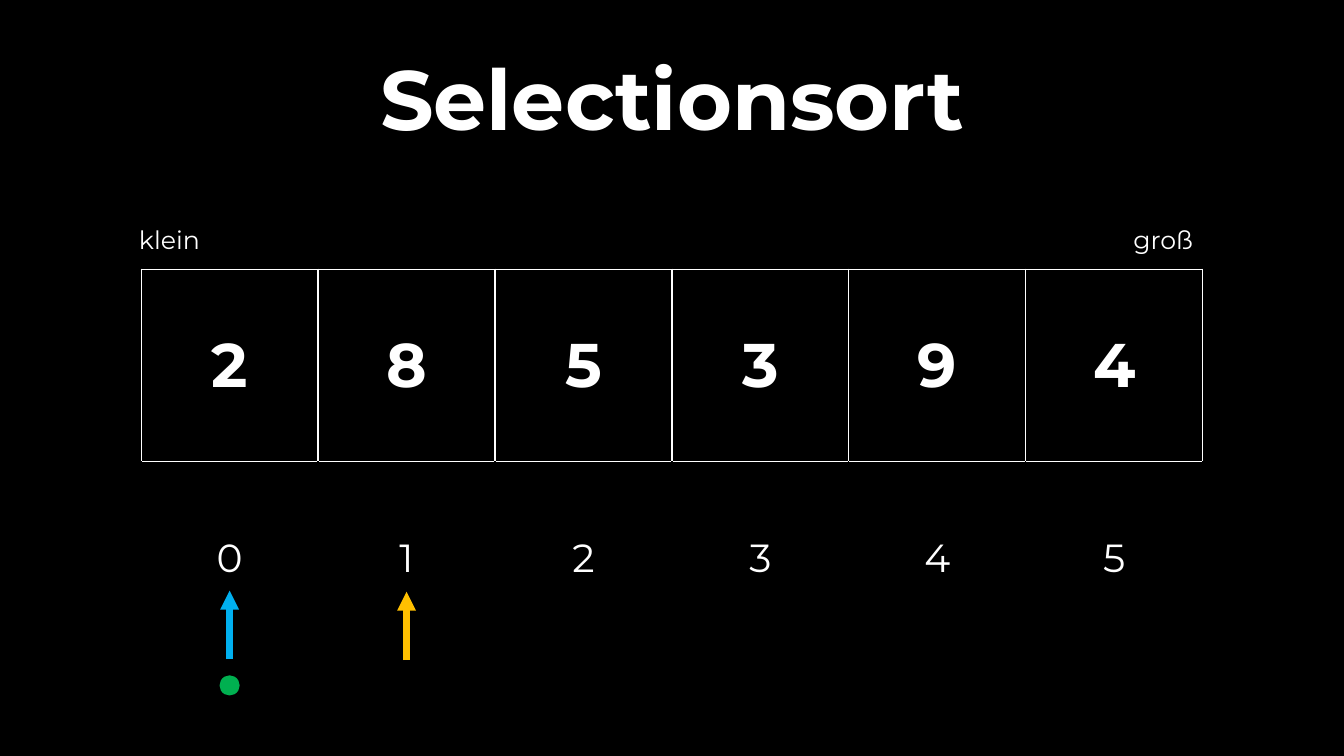
from lxml import etree
from pptx import Presentation, util as u
from pptx.dml.color import RGBColor
from pptx.enum import shapes, text
from pptx.oxml import ns

COLORS = {"black": "000000", "white": "FFFFFF", "blue": "00B0F0",
          "amber": "FFC000", "green": "00B050"}
VALUES = [2, 8, 5, 3, 9, 4]
LEFT, TOP, COLUMN, ROW = 1.4, 2.67, 1.755, 1.91
RIGHT = LEFT + COLUMN * len(VALUES)


def color(name):
    return RGBColor.from_string(COLORS[name])


def write(frame, content, size, bold=False, align=text.PP_ALIGN.CENTER):
    paragraph = frame.paragraphs[0]
    paragraph.alignment = align
    run = paragraph.add_run()
    run.text = content
    run.font.name = "Montserrat"
    run.font.size = u.Pt(size)
    run.font.bold = bold
    run.font.color.rgb = color("white")
    return paragraph


presentation = Presentation()
presentation.slide_width = u.Inches(13.33)
presentation.slide_height = u.Inches(7.5)
slide = presentation.slides.add_slide(presentation.slide_layouts[6])
slide.background.fill.solid()
slide.background.fill.fore_color.rgb = color("black")

# Array values above their indices
table = slide.shapes.add_table(2, len(VALUES), u.Inches(LEFT), u.Inches(TOP),
                               u.Inches(RIGHT - LEFT), u.Inches(2 * ROW)).table
table.first_row = table.horz_banding = False
rows = [(VALUES, 44, True, "white"), (range(len(VALUES)), 28, False, "black")]
for row, (numbers, size, bold, border) in enumerate(rows):
    for column, number in enumerate(numbers):
        cell = table.cell(row, column)
        cell.vertical_anchor = text.MSO_ANCHOR.MIDDLE
        write(cell.text_frame, str(number), size, bold)
        properties = cell._tc.get_or_add_tcPr()
        for side in ("lnL", "lnR", "lnT", "lnB"):
            line = etree.SubElement(properties, ns.qn(f"a:{side}"), w=str(u.Pt(1)))
            fill = etree.SubElement(line, ns.qn("a:solidFill"))
            shade = "white" if side == "lnT" else border
            etree.SubElement(fill, ns.qn("a:srgbClr"), val=COLORS[shade])
        cell.fill.solid()
        cell.fill.fore_color.rgb = color("black")

# Title and order labels
labels = [
    ("groß", RIGHT - 1.51, 2.18, 1.51, 0.4, 18, False, text.PP_ALIGN.RIGHT),
    ("klein", 1.28, 2.18, 1.51, 0.4, 18, False, text.PP_ALIGN.LEFT),
    ("Selectionsort", 0.15, 0.31, 13.03, 1.42, 60, True, text.PP_ALIGN.CENTER),
]
for content, left, top, width, height, size, bold, align in labels:
    box = slide.shapes.add_textbox(*map(u.Inches, (left, top, width, height)))
    box.text_frame.word_wrap = True
    paragraph = write(box.text_frame, content, size, bold, align)
# The title comes last in the list
box.text_frame.vertical_anchor = text.MSO_ANCHOR.MIDDLE
paragraph.line_spacing = 0.9
paragraph.space_before = u.Pt(10)

# Pointers under the first two columns
for column, shade in enumerate(("blue", "amber")):
    x = u.Inches(LEFT + COLUMN * (column + 0.5))
    bottom = 6.54 + 0.01 * column
    arrow = slide.shapes.add_connector(shapes.MSO_CONNECTOR.STRAIGHT, x, u.Inches(bottom),
                                       x, u.Inches(bottom - 0.68))
    arrow.line.color.rgb = color(shade)
    arrow.line.width = u.Pt(4.5)
    etree.SubElement(arrow.line._get_or_add_ln(), ns.qn("a:tailEnd"), type="triangle")
    etree.SubElement(arrow._element.spPr, ns.qn("a:effectLst"))

# Marker for the current minimum
marker = slide.shapes.add_shape(shapes.MSO_SHAPE.OVAL, u.Inches(LEFT + COLUMN / 2 - 0.1),
                                u.Inches(6.7), u.Inches(0.2), u.Inches(0.2))
marker.shadow.inherit = False
marker.fill.solid()
marker.fill.fore_color.rgb = color("green")
marker.line.fill.background()

presentation.save("out.pptx")
